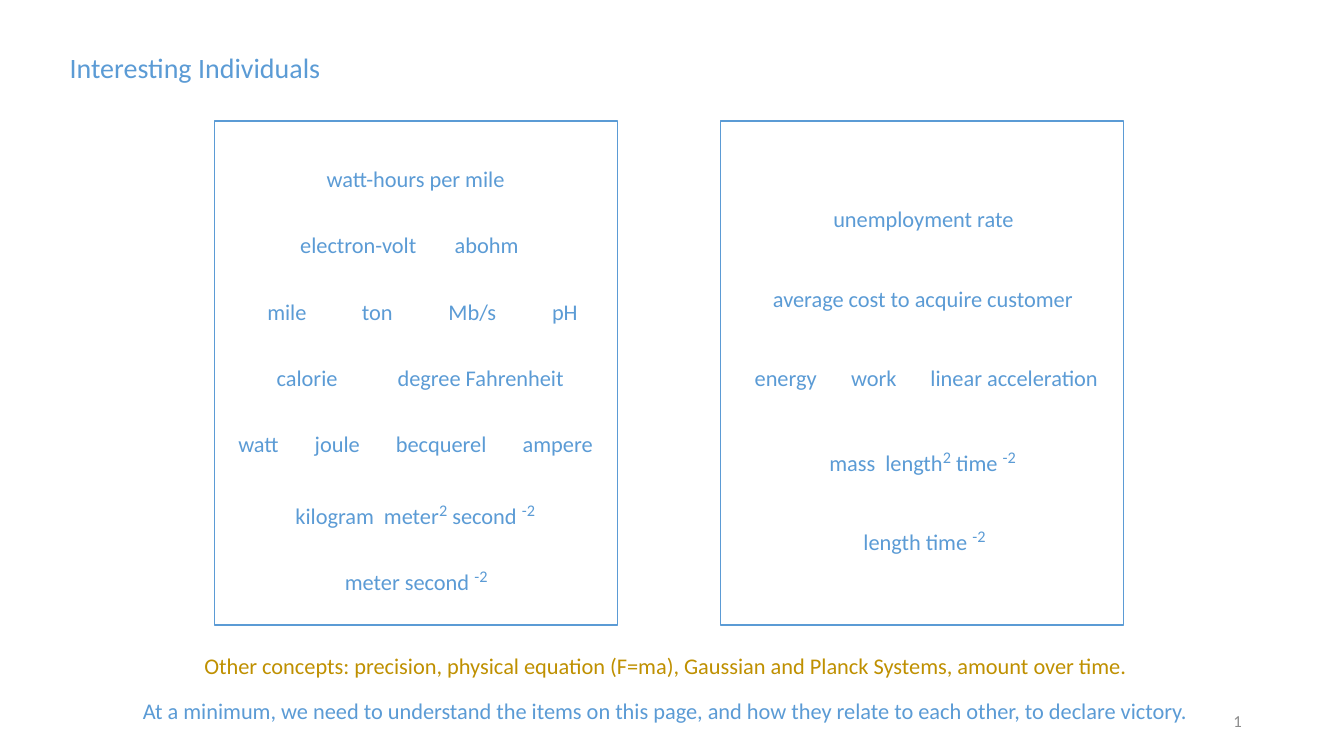
"""Build the slide of interesting units and quantity kinds."""
import pptx
import pptx.dml.color
import pptx.enum.shapes
import pptx.enum.text
import pptx.oxml
import pptx.oxml.ns
import pptx.util

Cm = pptx.util.Cm
Pt = pptx.util.Pt
Align = pptx.enum.text.PP_ALIGN
Anchor = pptx.enum.text.MSO_ANCHOR

COLOURS = {"blue": "5B9BD5", "gold": "BF9000", "grey": "8C8C8C"}
FONT = "Calibri"
LINE_HEIGHT = 0.94

UNIT_ROWS = [
    (7.95, 0, [("watt-hours per mile", 5.05)]),
    (7.29, 0.43, [("electron-volt", 3.48), ("abohm", 2.13)]),
    (6.48, 0.88, [("mile", 1.5), ("ton", 1.3), ("Mb/s", 1.73), ("pH", 1.17)]),
    (6.71, 0.97, [("calorie", 2.06), ("degree Fahrenheit", 4.75)]),
    (5.74, 0.37, [("watt", 1.55), ("joule", 1.68), ("becquerel", 2.82), ("ampere", 2.31)]),
    (7.11, 0, [("kilogram  meter^2^ second ^-2", 6.71)]),
    (8.38, 0, [("meter second ^-2", 4.22)]),
]
QUANTITY_ROWS = [
    (20.75, 0, [("unemployment rate", 5.11)]),
    (19.23, 0, [("average cost to acquire customer", 8.18)]),
    (18.77, 0.32, [("energy", 2.11), ("work", 1.68), ("linear acceleration", 4.78)]),
    (20.65, 0, [("mass  length^2^ time ^-2", 5.36)]),
    (21.51, 0, [("length time ^-2", 3.68)]),
]


def colour(name):
    """Return the named colour."""
    return pptx.dml.color.RGBColor.from_string(COLOURS[name])


def style(font, size, name):
    """Set typeface, size and colour of a font."""
    font.name = FONT
    font.size = Pt(size)
    font.color.rgb = colour(name)


def write(box, text, size=16, name="blue", align=Align.LEFT):
    """Fill a box with one unwrapped line; carets enclose superscripts."""
    frame = box.text_frame
    frame.word_wrap = False
    frame.auto_size = pptx.enum.text.MSO_AUTO_SIZE.SHAPE_TO_FIT_TEXT
    frame.vertical_anchor = Anchor.TOP
    para = frame.paragraphs[0]
    para.alignment = align
    for index, part in enumerate(text.split("^")):
        if not part:
            continue
        raised = index % 2 == 1
        span = para.add_run()
        span.text = part
        style(span.font, 20 if raised else size, name)
        if raised:
            span.font._element.set("baseline", "30000")


def add_title(page, text):
    """Move and fill the title placeholder."""
    title = page.shapes.title
    title.left, title.top, title.width, title.height = Cm(1.5), Cm(1.14), Cm(7.06), Cm(1.12)
    write(title, text, size=20)


def add_line(shapes, text, left, top, width, name="blue", align=Align.LEFT):
    """Add a one-line text box."""
    box = shapes.add_textbox(Cm(left), Cm(top), Cm(width), Cm(LINE_HEIGHT))
    write(box, text, name=name, align=align)


def add_frame(page, left):
    """Add an outlined, unfilled rectangle."""
    frame = page.shapes.add_shape(
        pptx.enum.shapes.MSO_SHAPE.RECTANGLE, Cm(left), Cm(3.05), Cm(10.16), Cm(12.7))
    frame.shadow.inherit = False
    frame.fill.background()
    frame.line.color.rgb = colour("blue")
    frame.line.width = Pt(1)


def add_rows(page, rows, top, step, align):
    """Add evenly stepped rows of evenly spaced terms, grouping shared rows."""
    for index, (left, gap, terms) in enumerate(rows):
        shapes = page.shapes.add_group_shape().shapes if len(terms) > 1 else page.shapes
        for text, width in terms:
            add_line(shapes, text, left, top + index * step, width, align=align)
            left += width + gap


def add_page_number(page):
    """Add a slide number field at the lower right."""
    box = page.shapes.add_textbox(Cm(23.93), Cm(17.65), Cm(7.62), Cm(1.02))
    box.text_frame.word_wrap = True
    box.text_frame.vertical_anchor = Anchor.MIDDLE
    para = box.text_frame.paragraphs[0]
    para.alignment = Align.RIGHT
    para._p.append(pptx.oxml.parse_xml(
        f'<a:fld {pptx.oxml.ns.nsdecls("a")} type="slidenum" '
        'id="{B6F15528-21DE-4FAA-801E-634DDDAF4B2B}">'
        f'<a:rPr lang="en-US" sz="1200"><a:solidFill><a:srgbClr val="{COLOURS["grey"]}"/>'
        f'</a:solidFill><a:latin typeface="{FONT}"/></a:rPr><a:t>1</a:t></a:fld>'))


def main():
    """Build and save the deck."""
    deck = pptx.Presentation()
    deck.slide_width, deck.slide_height = Cm(33.87), Cm(19.05)
    page = deck.slides.add_slide(deck.slide_layouts[5])
    add_title(page, "Interesting Individuals")
    for left in (5.41, 18.16):
        add_frame(page, left)
    add_rows(page, UNIT_ROWS, 4.04, 1.67, Align.CENTER)
    add_rows(page, QUANTITY_ROWS, 5.05, 2, Align.LEFT)
    add_line(page.shapes, "Other concepts: precision, physical equation (F=ma), "
             "Gaussian and Planck Systems, amount over time.", 4.9, 16.31, 24.05, name="gold")
    add_line(page.shapes, "At a minimum, we need to understand the items on this page, "
             "and how they relate to each other, to declare victory.", 3.35, 17.45, 27.18)
    add_page_number(page)
    deck.save("out.pptx")


if __name__ == "__main__":
    main()
